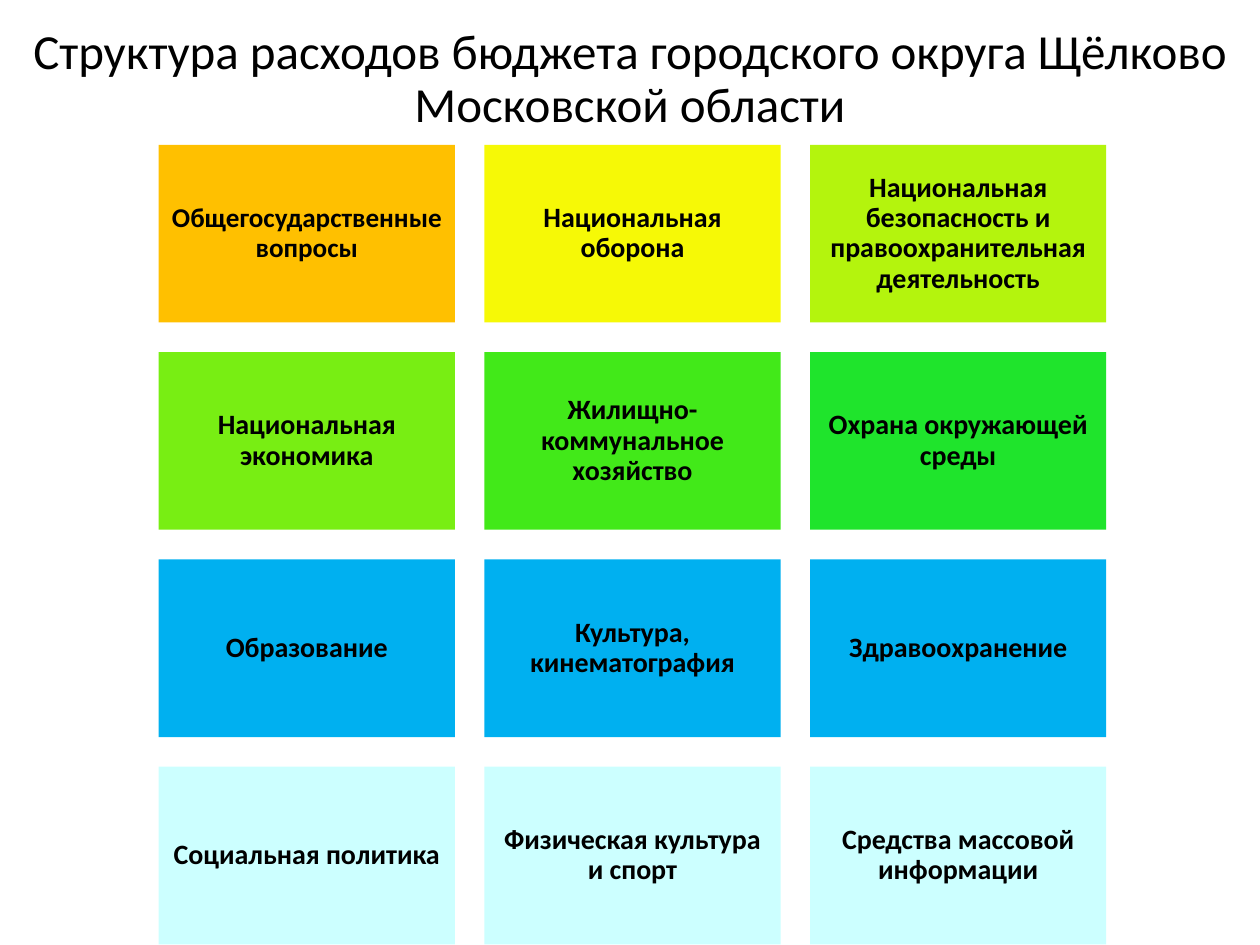
from pptx import Presentation
from pptx.dml.color import RGBColor
from pptx.enum.shapes import MSO_SHAPE
from pptx.enum.text import MSO_ANCHOR, MSO_AUTO_SIZE, PP_ALIGN
from pptx.util import Inches, Pt

RECTANGLE = MSO_SHAPE.RECTANGLE
MIDDLE = MSO_ANCHOR.MIDDLE
CENTER = PP_ALIGN.CENTER
NO_AUTOFIT = MSO_AUTO_SIZE.NONE

TITLE = "Структура расходов бюджета городского округа Щёлково Московской области"
EXPENSES = [
    ("Общегосударственные вопросы", "FFC000", 15.5),
    ("Национальная оборона", "F6F906", 16),
    ("Национальная безопасность и правоохранительная деятельность", "B4F40D", 16),
    ("Национальная экономика", "78EE13", 16),
    ("Жилищно-коммунальное хозяйство", "42E919", 16),
    ("Охрана окружающей среды", "1FE42C", 16),
    ("Образование", "00B0F0", 16),
    ("Культура, кинематография", "00B0F0", 16),
    ("Здравоохранение", "00B0F0", 16),
    ("Социальная политика", "CCFFFF", 16),
    ("Физическая культура и спорт", "CCFFFF", 16),
    ("Средства массовой информации", "CCFFFF", 16),
]
COLUMNS = 3
GRID_LEFT, GRID_TOP = 1.26, 1.15
TILE_WIDTH, TILE_HEIGHT = 2.35, 1.41
GAP = TILE_WIDTH / 10


def rgb(value):
    return RGBColor.from_string(value)


class BudgetSlide:
    """Holds the text style and the slide on which the elements are placed."""

    font = "Calibri"
    ink = "000000"
    line_spacing = 0.9
    tile_inset = 0.07

    def __init__(self, slide):
        self.slide = slide

    def set_text(self, frame, text, size, bold):
        frame.text = text
        frame.word_wrap = True
        frame.auto_size = NO_AUTOFIT
        frame.vertical_anchor = MIDDLE
        paragraph = frame.paragraphs[0]
        paragraph.alignment = CENTER
        paragraph.line_spacing = self.line_spacing
        font = paragraph.runs[0].font
        font.name = self.font
        font.size = Pt(size)
        font.bold = bold
        font.color.rgb = rgb(self.ink)

    def title(self, text, left, top, width, height):
        heading = self.slide.shapes.title
        heading.left, heading.top = Inches(left), Inches(top)
        heading.width, heading.height = Inches(width), Inches(height)
        self.set_text(heading.text_frame, text, 28, False)

    def tile(self, text, color, size, left, top):
        tile = self.slide.shapes.add_shape(
            RECTANGLE, Inches(left), Inches(top), Inches(TILE_WIDTH), Inches(TILE_HEIGHT)
        )
        tile.shadow.inherit = False
        tile.fill.solid()
        tile.fill.fore_color.rgb = rgb(color)
        tile.line.fill.background()
        frame = tile.text_frame
        frame.margin_left = frame.margin_right = Inches(self.tile_inset)
        frame.margin_top = frame.margin_bottom = Inches(self.tile_inset)
        self.set_text(frame, text, size, True)


def main():
    presentation = Presentation()
    presentation.slide_width = Inches(10)
    presentation.slide_height = Inches(7.5)
    title_only = presentation.slide_layouts[5]
    budget = BudgetSlide(presentation.slides.add_slide(title_only))
    budget.title(TITLE, 0, 0.01, 10, 1.25)
    for index, (expense, color, size) in enumerate(EXPENSES):
        row, column = divmod(index, COLUMNS)
        left = GRID_LEFT + column * (TILE_WIDTH + GAP)
        top = GRID_TOP + row * (TILE_HEIGHT + GAP)
        budget.tile(expense, color, size, left, top)
    presentation.save("out.pptx")


if __name__ == "__main__":
    main()
